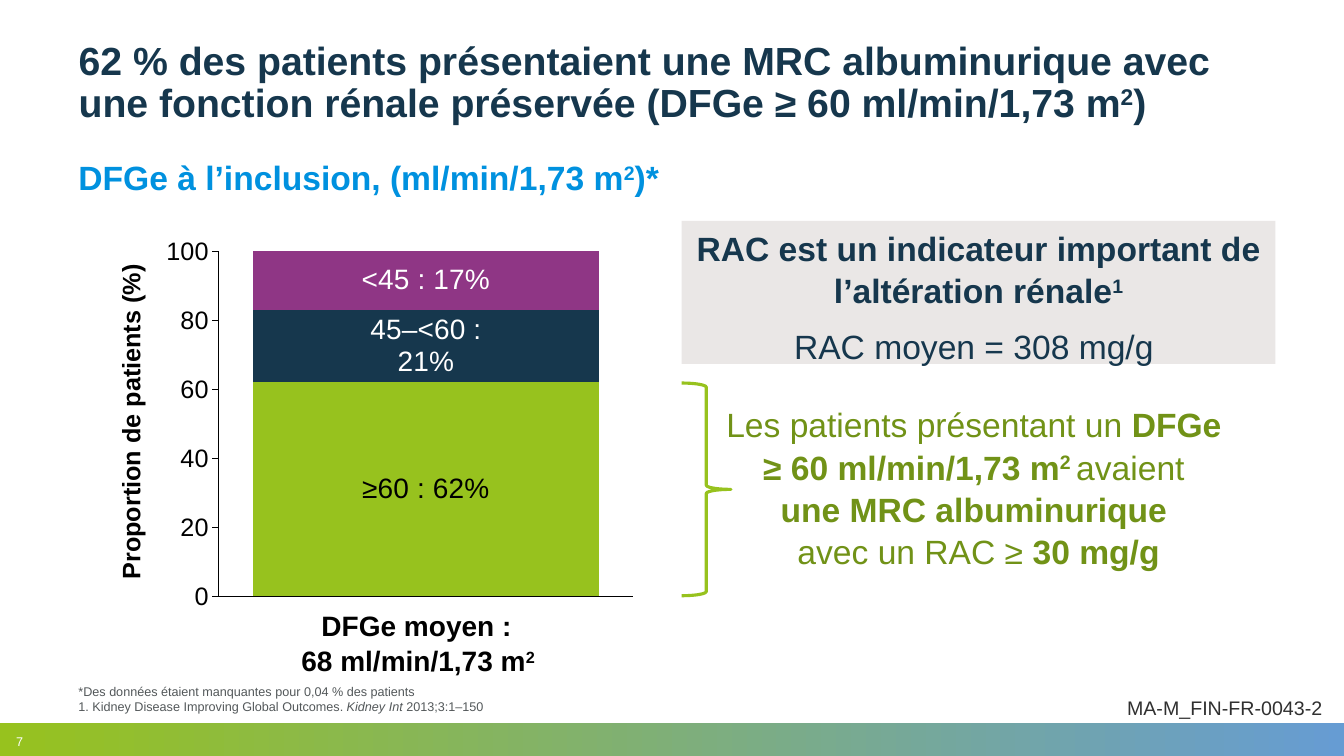
import pptx
import pptx.chart.data
import pptx.dml.color
import pptx.enum.chart
import pptx.enum.shapes
import pptx.enum.text
import pptx.oxml
import pptx.oxml.ns
import pptx.util

Inches, Pt = pptx.util.Inches, pptx.util.Pt
RGB = pptx.dml.color.RGBColor
ANCHOR = pptx.enum.text.MSO_ANCHOR
ALIGN = pptx.enum.text.PP_ALIGN
SHAPE = pptx.enum.shapes.MSO_SHAPE
XL = pptx.enum.chart

NAVY = RGB(0x16, 0x37, 0x4D)
SKY = RGB(0x00, 0x91, 0xDF)
LIME = RGB(0x97, 0xC2, 0x1E)
OLIVE = RGB(0x71, 0x92, 0x17)
PURPLE = RGB(0x8F, 0x36, 0x85)
BLUE = RGB(0x66, 0x9C, 0xD3)
PALE = RGB(0xEA, 0xE7, 0xE6)
GREY = RGB(0x53, 0x58, 0x5A)
CHARCOAL = RGB(0x30, 0x30, 0x30)
BLACK = RGB(0, 0, 0)
WHITE = RGB(0xFF, 0xFF, 0xFF)

FONT = "Arial"
BOLD = {"bold": True}
ITALIC = {"italic": True}
SUPER = {"baseline": "30000"}
BOLD_SUPER = {**BOLD, **SUPER}
BREAK = ("\n", {})


def set_font(font, size, color, **formats):
    """Apply the typeface, size, colour and any further formats to a font."""
    for key, value in {"name": FONT, "size": Pt(size), **formats}.items():
        setattr(font, key, value)
    font.color.rgb = color


def write(frame, paragraphs, size, color, frame_formats=None, **paragraph_formats):
    """Fill a text frame with paragraphs made of (text, formats) runs."""
    defaults = {"word_wrap": True, "auto_size": pptx.enum.text.MSO_AUTO_SIZE.NONE,
                "vertical_anchor": ANCHOR.TOP}
    for key, value in {**defaults, **(frame_formats or {})}.items():
        setattr(frame, key, value)
    for index, pieces in enumerate(paragraphs):
        paragraph = frame.add_paragraph() if index else frame.paragraphs[0]
        for key, value in {"alignment": ALIGN.LEFT, **paragraph_formats}.items():
            if index or key != "space_before":
                setattr(paragraph, key, value)
        for text, formats in pieces:
            if text == "\n":
                paragraph.add_line_break()
                continue
            run = paragraph.add_run()
            run.text = text
            font_formats = dict(formats)
            baseline = font_formats.pop("baseline", None)
            set_font(run.font, size, color, **font_formats)
            if baseline:
                run.font._element.set("baseline", baseline)


def add_text(slide, box, *args, **formats):
    """Add a text box to the slide and write its paragraphs."""
    write(slide.shapes.add_textbox(*map(Inches, box)).text_frame, *args, **formats)


def add_plain_shape(slide, kind, box):
    """Add a preset shape without shadow or outline."""
    shape = slide.shapes.add_shape(kind, *map(Inches, box))
    shape.shadow.inherit = False
    shape.line.fill.background()
    return shape


def add_headings(slide, left, top, width):
    """Place the title and the chart heading."""
    title = slide.shapes.title
    place = {"left": left, "top": top, "width": width, "height": 1.05}
    for key, value in place.items():
        setattr(title, key, Inches(value))
    write(title.text_frame,
          [[("62\u00a0% des patients présentaient une MRC albuminurique avec une "
             "fonction rénale préservée (DFGe ≥ 60 ml/min/1,73 m", BOLD),
            ("2", BOLD_SUPER), (")", BOLD)]], 28, NAVY, line_spacing=0.9)
    add_text(slide, (left, top + 1.19, width, 0.51),
             [[("DFGe à l’inclusion, (ml/min/1,73 m", BOLD), ("2", BOLD_SUPER),
               (")*", BOLD)]], 24, SKY, line_spacing=0.9)


def make_layout(target, **fractions):
    """Build a manual chart layout for the plot area or for a title."""
    names = ("layoutTarget",) if target else ()
    values = {**dict.fromkeys(names, target), "xMode": "edge", "yMode": "edge", **fractions}
    parts = "".join(f'<c:{key} val="{value}"/>' for key, value in values.items())
    return pptx.oxml.parse_xml(
        f'<c:layout {pptx.oxml.ns.nsdecls("c")}><c:manualLayout>{parts}'
        '</c:manualLayout></c:layout>')


def replace_layout(element, layout, position):
    """Swap the layout child of a chart element for a manual one."""
    for old in element.findall(pptx.oxml.ns.qn("c:layout")):
        element.remove(old)
    element.insert(position, layout)


def add_egfr_chart(slide, left, top, width, height):
    """Place the stacked column of eGFR classes with its caption."""
    classes = [(62, "≥60 : 62%", LIME, BLACK), (21, "45–<60 : 21%", NAVY, WHITE),
               (17, "<45 : 17%", PURPLE, WHITE)]
    data = pptx.chart.data.CategoryChartData(number_format="#,##0")
    data.categories = ["%"]
    for share, label, _, _ in classes:
        data.add_series(label.split(" :")[0], [share])
    chart = slide.shapes.add_chart(XL.XL_CHART_TYPE.COLUMN_STACKED,
                                   *map(Inches, (left, top, width, height)), data).chart
    chart.has_legend = chart.has_title = False
    set_font(chart.font, 18, BLACK)
    plot = chart.plots[0]
    for key, value in {"gap_width": 20, "overlap": 100, "vary_by_categories": False}.items():
        setattr(plot, key, value)
    for series, (_, label, fill, ink) in zip(plot.series, classes):
        series.format.fill.solid()
        series.format.fill.fore_color.rgb = fill
        point_label = series.points[0].data_label
        point_label.text_frame.text = label
        set_font(point_label.text_frame.paragraphs[0].runs[0].font, 20, ink)
        point_label.position = XL.XL_LABEL_POSITION.CENTER

    none, outside = XL.XL_TICK_MARK.NONE, XL.XL_TICK_MARK.OUTSIDE
    axes = [(chart.category_axis, {"major_tick_mark": none,
                                   "tick_label_position": XL.XL_TICK_LABEL_POSITION.NONE}),
            (chart.value_axis, {"major_tick_mark": outside, "minimum_scale": 0,
                                "maximum_scale": 100, "major_unit": 20})]
    for axis, formats in axes:
        for key, value in {"has_major_gridlines": False, "minor_tick_mark": none,
                           **formats}.items():
            setattr(axis, key, value)
        axis.format.line.color.rgb = BLACK
        axis.format.line.width = Pt(0.75)
    set_font(chart.value_axis.tick_labels.font, 18, BLACK)
    axis_title = chart.value_axis.axis_title
    axis_title.text_frame.text = "Proportion de patients (%)"
    set_font(axis_title.text_frame.paragraphs[0].runs[0].font, 18, BLACK, bold=True)
    replace_layout(axis_title._element, make_layout(None, x=0.07, y=0.09), 1)
    plot_area = chart._chartSpace.chart.plotArea
    replace_layout(plot_area, make_layout("inner", x=0.255, y=0.07, w=0.706, h=0.793), 0)

    add_text(slide, (left + 1.81, top + 3.78, 3.36, 0.77),
             [[("DFGe moyen : ", BOLD), BREAK, ("68 ml/min/1,73 m", BOLD),
               ("2 ", BOLD_SUPER)]], 20, BLACK, alignment=ALIGN.CENTER, line_spacing=1.05)


def add_findings(slide, left, top, width):
    """Place the shaded RAC panel and the bracketed finding below it."""
    panel = add_plain_shape(slide, SHAPE.RECTANGLE, (left, top, width, 1.42))
    panel.fill.solid()
    panel.fill.fore_color.rgb = PALE
    centred = {"alignment": ALIGN.CENTER, "line_spacing": 1.05}
    write(panel.text_frame,
          [[("RAC est un indicateur important de l’altération rénale", BOLD),
            ("1", BOLD_SUPER)], [("RAC moyen = 308 mg/g ", {})]],
          24, NAVY, space_before=Pt(10), **centred)
    brace = add_plain_shape(slide, SHAPE.RIGHT_BRACE, (left, top + 1.61, 0.49, 2.11))
    brace.fill.background()
    brace.line.color.rgb = LIME
    brace.line.width = Pt(2.25)
    add_text(slide, (left, top + 1.75, width, 1.75),
             [[("Les patients présentant un ", {}), ("DFGe ", BOLD), BREAK,
               ("≥ 60 ml/min/1,73 m", BOLD), ("2 ", BOLD_SUPER), ("avaient ", {}), BREAK,
               ("une MRC albuminurique ", BOLD), BREAK,
               ("avec un RAC ≥ ", {}), ("30 mg/g", BOLD)]], 24, OLIVE, **centred)


def add_footer(slide, left, top, width, height):
    """Place the gradient band, page number, notes and document code."""
    band = add_plain_shape(slide, SHAPE.RECTANGLE, (left, top, width, height))
    band.fill.gradient()
    band.fill.gradient_angle = 0
    for stop, position, color in zip(band.fill.gradient_stops, (0, 1), (LIME, BLUE)):
        stop.position = position
        stop.color.rgb = color
    bottom = {"vertical_anchor": ANCHOR.BOTTOM}
    add_text(slide, (left + 0.16, top + 0.06, 0.41, 0.25), [[("7", {})]], 9, WHITE,
             {**bottom, "margin_left": 0})
    add_text(slide, (left + 0.68, top - 0.59, 9, 0.55),
             [[("*Des données étaient manquantes pour 0,04\u00a0% des patients", {})],
              [("1. Kidney Disease Improving Global Outcomes. ", {}),
               ("Kidney Int ", ITALIC), ("2013;3:1–150", {})]], 9, GREY, bottom)
    add_text(slide, (left + 11.08, top - 0.32, 2.15, 0.34),
             [[("MA-M_FIN-FR-0043-2", {})]], 14, CHARCOAL, {"word_wrap": False})


def main():
    """Build the slide and save the deck."""
    deck = pptx.Presentation()
    deck.slide_width, deck.slide_height = Inches(13.33), Inches(7.5)
    slide = deck.slides.add_slide(deck.slide_layouts[5])
    add_headings(slide, 0.68, 0.36, 11.93)
    add_egfr_chart(slide, 0.68, 2.19, 5.83, 4.32)
    add_findings(slide, 6.76, 2.19, 5.89)
    add_footer(slide, 0, 7.17, 13.33, 0.33)
    deck.save("out.pptx")


if __name__ == "__main__":
    main()
